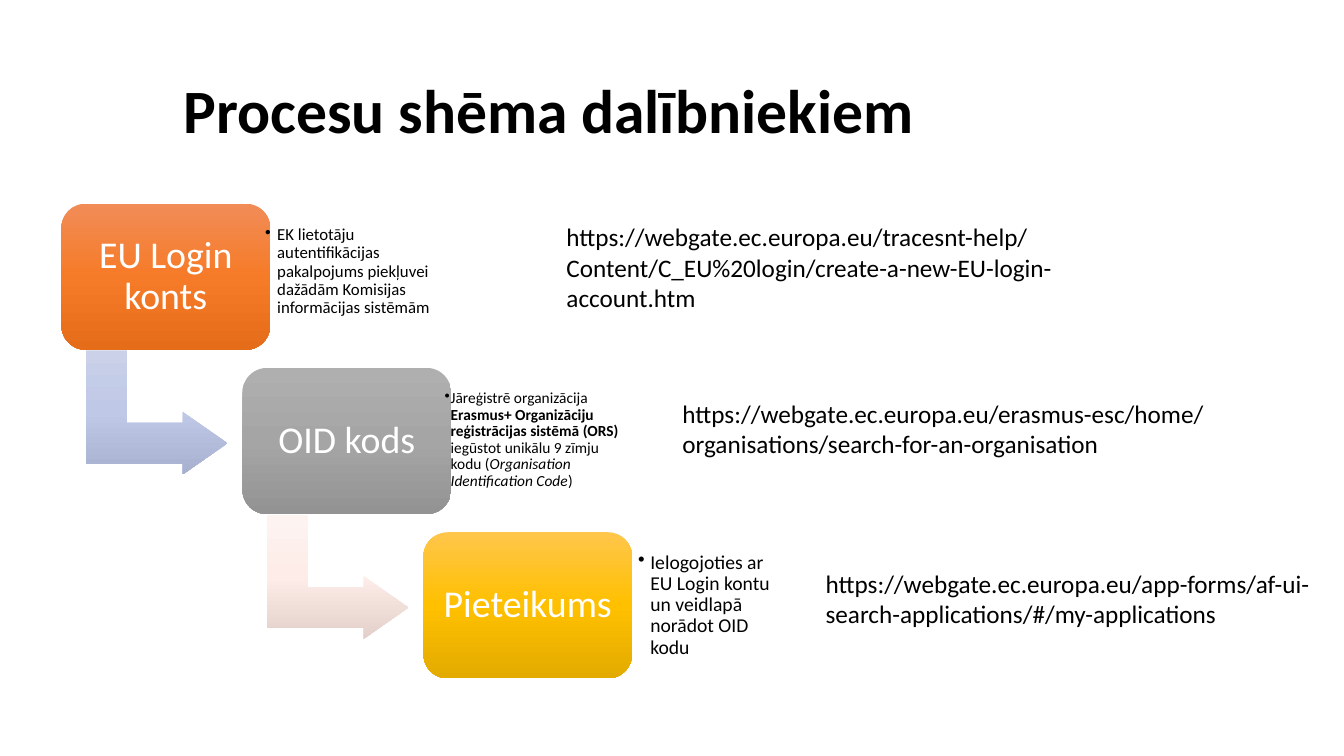
from dataclasses import dataclass

from lxml.etree import SubElement
from pptx import Presentation
from pptx.dml.color import RGBColor
from pptx.enum.shapes import MSO_SHAPE
from pptx.enum.text import MSO_ANCHOR, PP_ALIGN
from pptx.oxml.ns import qn
from pptx.util import Inches, Pt


@dataclass(frozen=True)
class Theme:
    font: str = "Calibri"
    ink: str = "000000"
    card_ink: str = "FFFFFF"
    title_size: int = 44
    card_size: int = 27
    link_size: int = 18
    orange: tuple = ("F18C57", "F67B28", "E56C19")
    grey: tuple = ("AFAFAF", "A5A5A5", "939393")
    gold: tuple = ("FFC64B", "FFC000", "E3AB00")
    blue_arrow: tuple = ("CAD1E9", "BFC8E6", "A7B0CF")
    pink_arrow: tuple = ("FDF4F1", "FDECE7", "E3D0CA")


THEME = Theme()
TITLE = "Procesu shēma dalībniekiem"

# Runs are (text, style); boxes are (left, top, width, height) in inches.
STEPS = [
    {
        "name": "EU Login konts",
        "fill": THEME.orange,
        "arrow": THEME.blue_arrow,
        "note": [("EK lietotāju autentifikācijas pakalpojums piekļuvei dažādām "
                  "Komisijas informācijas sistēmām", "")],
        "note_box": (2.58, 2.11, 1.84, 1.17),
        "note_style": {"size": 12, "indent": 0.12, "margin": 0.05},
        "link": "https://webgate.ec.europa.eu/tracesnt-help/Content/"
                "C_EU%20login/create-a-new-EU-login-account.htm",
        "link_box": (5.52, 2.15, 5.27, 1.01),
    },
    {
        "name": "OID kods",
        "fill": THEME.grey,
        "arrow": THEME.pink_arrow,
        "note": [("Jāreģistrē organizācija ", ""),
                 ("Erasmus+ Organizāciju reģistrācijas sistēmā (ORS) ", "bold"),
                 ("iegūstot unikālu 9 zīmju kodu (", ""),
                 ("Organisation Identification Code", "italic"),
                 (")", "")],
        "note_box": (4.35, 3.78, 1.87, 1.17),
        "note_style": {"size": 11, "indent": 0.06, "margin": 0.06},
        "link": "https://webgate.ec.europa.eu/erasmus-esc/home/"
                "organisations/search-for-an-organisation",
        "link_box": (6.67, 3.9, 6.66, 0.71),
    },
    {
        "name": "Pieteikums",
        "fill": THEME.gold,
        "arrow": None,
        "note": [("Ielogojoties ar EU Login kontu un veidlapā norādot OID kodu", "")],
        "note_box": (6.27, 5.42, 1.51, 1.17),
        "note_style": {"size": 14, "indent": 0.12, "margin": 0.06},
        "link": "https://webgate.ec.europa.eu/app-forms/"
                "af-ui-search-applications/#/my-applications",
        "link_box": (8.09, 5.59, 5.24, 0.71),
    },
]

CARD_LEFT, CARD_TOP = 0.61, 2.02
CARD_WIDTH, CARD_HEIGHT = 2.07, 1.45
STEP_X, STEP_Y = 1.795, 1.63
ARROW_DX, ARROW_DY = 0.33, 1.37
ARROW_WIDTH, ARROW_HEIGHT = 1.23, 1.4


def fill_gradient(shape, colours):
    """Fill top to bottom with three stops that stay upright under rotation."""
    gradient = SubElement(shape.element.spPr, qn("a:gradFill"), rotWithShape="0")
    stops = SubElement(gradient, qn("a:gsLst"))
    for position, colour in zip((0, 50000, 100000), colours):
        stop = SubElement(stops, qn("a:gs"), pos=str(position))
        SubElement(stop, qn("a:srgbClr"), val=colour)
    SubElement(gradient, qn("a:lin"), ang="5400000", scaled="0")


def add_block(page, preset, box, colours, adjustments):
    shape = page.shapes.add_shape(preset, *map(Inches, box))
    for index, value in enumerate(adjustments):
        shape.adjustments[index] = value
    fill_gradient(shape, colours)
    shape.line.fill.background()
    shape.shadow.inherit = False
    return shape


def set_margins(frame, margin):
    frame.margin_left = frame.margin_right = Inches(margin)
    frame.margin_top = frame.margin_bottom = Inches(margin)


def style_paragraph(para, size, colour=THEME.ink, bold=False):
    para.font.name = THEME.font
    para.font.size = Pt(size)
    para.font.bold = bold
    para.font.color.rgb = RGBColor.from_string(colour)


def add_text(page, box, text, size, bold=False):
    frame = page.shapes.add_textbox(*map(Inches, box)).text_frame
    frame.word_wrap = True
    para = frame.paragraphs[0]
    para.text = text
    style_paragraph(para, size, bold=bold)
    return frame


def add_note(page, box, runs, size, indent, margin):
    frame = page.shapes.add_textbox(*map(Inches, box)).text_frame
    frame.word_wrap = True
    frame.vertical_anchor = MSO_ANCHOR.MIDDLE
    set_margins(frame, margin)
    para = frame.paragraphs[0]
    properties = para._p.get_or_add_pPr()
    properties.set("marL", str(Inches(indent)))
    properties.set("indent", str(-Inches(indent)))
    SubElement(properties, qn("a:buChar"), char="•")
    para.line_spacing = 0.9
    style_paragraph(para, size)
    for text, style in runs:
        span = para.add_run()
        span.text = text
        if style == "bold":
            span.font.bold = True
        elif style == "italic":
            span.font.italic = True


def add_card(page, left, top, name, colours):
    card = add_block(page, MSO_SHAPE.ROUNDED_RECTANGLE,
                     (left, top, CARD_WIDTH, CARD_HEIGHT), colours, [0.167])
    frame = card.text_frame
    frame.word_wrap = True
    frame.vertical_anchor = MSO_ANCHOR.MIDDLE
    set_margins(frame, 0.11)
    para = frame.paragraphs[0]
    para.text = name
    para.alignment = PP_ALIGN.CENTER
    para.line_spacing = 0.9
    style_paragraph(para, THEME.card_size, THEME.card_ink)


def main():
    deck = Presentation()
    deck.slide_width, deck.slide_height = Inches(13.33), Inches(7.5)
    page = deck.slides.add_slide(deck.slide_layouts[6])

    title = add_text(page, (1.72, 0.4, 11.5, 1.45), TITLE, THEME.title_size, bold=True)
    title.vertical_anchor = MSO_ANCHOR.MIDDLE
    title.paragraphs[0].line_spacing = 0.9

    for index, step in enumerate(STEPS):
        left = CARD_LEFT + index * STEP_X
        top = CARD_TOP + index * STEP_Y
        if step["arrow"]:
            arrow_box = (left + ARROW_DX, top + ARROW_DY, ARROW_WIDTH, ARROW_HEIGHT)
            arrow = add_block(page, MSO_SHAPE.BENT_UP_ARROW, arrow_box,
                              step["arrow"], [0.328, 0.25, 0.358])
            arrow.rotation = 90
        add_card(page, left, top, step["name"], step["fill"])
        add_note(page, step["note_box"], step["note"], **step["note_style"])
        add_text(page, step["link_box"], step["link"], THEME.link_size)

    deck.save("out.pptx")


if __name__ == "__main__":
    main()
